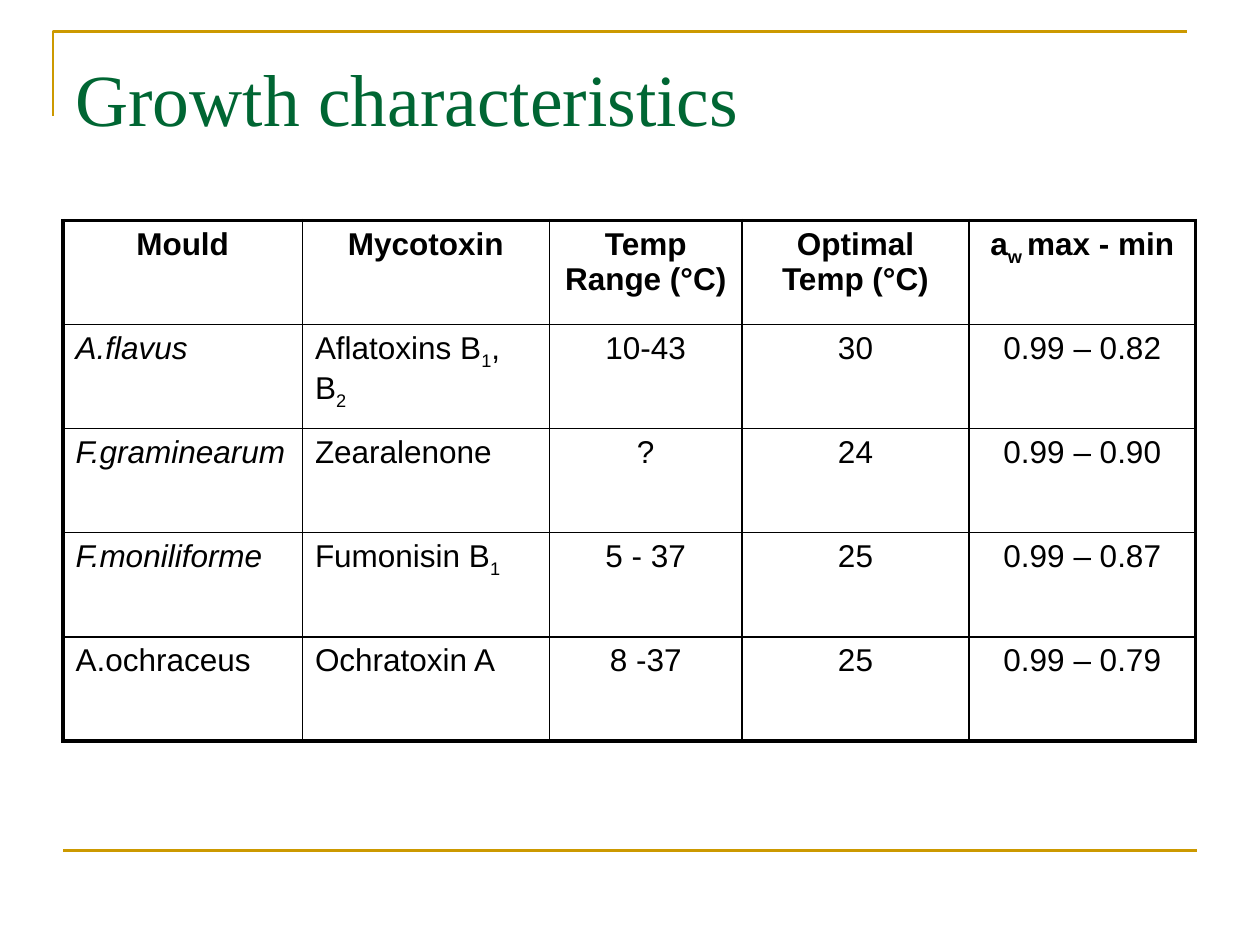
from lxml.etree import SubElement
from pptx import Presentation
from pptx.dml.color import RGBColor
from pptx.enum.shapes import MSO_CONNECTOR
from pptx.enum.text import MSO_ANCHOR, PP_ALIGN
from pptx.oxml.ns import qn
from pptx.util import Inches, Pt

GOLD = RGBColor(0xCC, 0x99, 0x00)
GREEN = RGBColor(0x00, 0x66, 0x33)
BLACK = RGBColor(0x00, 0x00, 0x00)

COL_WIDTHS = [1.9, 1.96, 1.53, 1.8, 1.8]
ROW_HEIGHT = 0.826
THIN, THICK = 1, 2.25

# Text between tildes is subscript.
ROWS = [
    ["Mould", "Mycotoxin", "Temp Range (°C)", "Optimal Temp (°C)", "a~w ~max - min"],
    ["A.flavus", "Aflatoxins B~1~, B~2~", "10-43", "30", "0.99 – 0.82"],
    ["F.graminearum", "Zearalenone", "?", "24", "0.99 – 0.90"],
    ["F.moniliforme", "Fumonisin B~1~", "5 - 37", "25", "0.99 – 0.87"],
    ["A.ochraceus", "Ochratoxin A", "8 -37", "25", "0.99 – 0.79"],
]
ITALIC_MOULDS = {"A.flavus", "F.graminearum", "F.moniliforme"}


class SlideBuilder:
    def __init__(self, slide):
        self.slide = slide
        self.title_font = "Times New Roman"
        self.body_font = "Arial"

    def run(self, p, text, font, size, color, bold=False, italic=False):
        r = p.add_run()
        r.text = text
        r.font.name, r.font.size = font, Pt(size)
        r.font.bold, r.font.italic = bold, italic
        r.font.color.rgb = color
        return r

    def title(self, text, left, top, width, height):
        box = self.slide.shapes.add_textbox(
            Inches(left), Inches(top), Inches(width), Inches(height))
        tf = box.text_frame
        tf.word_wrap = True
        tf.margin_top = Inches(0.12)
        tf.vertical_anchor = MSO_ANCHOR.TOP
        self.run(tf.paragraphs[0], text, self.title_font, 42, GREEN)

    def corner(self, points):
        """Draw an open gold outline through the points."""
        (x, y), *rest = [(Inches(px), Inches(py)) for px, py in points]
        builder = self.slide.shapes.build_freeform(x, y)
        builder.add_line_segments(rest, close=False)
        sp = builder.convert_to_shape()
        sp.shadow.inherit = False
        sp.fill.background()
        sp.line.color.rgb = GOLD
        sp.line.width = Pt(1.5)

    def rule(self, x1, x2, y):
        line = self.slide.shapes.add_connector(
            MSO_CONNECTOR.STRAIGHT, Inches(x1), Inches(y), Inches(x2), Inches(y))
        line.line.color.rgb = GOLD
        line.line.width = Pt(1.5)
        SubElement(line._element.spPr, qn("a:effectLst"))

    def border(self, cell, side, width):
        ln = SubElement(cell._tc.get_or_add_tcPr(), qn(f"a:ln{side}"), w=str(Pt(width)))
        fill = SubElement(ln, qn("a:solidFill"))
        SubElement(fill, qn("a:srgbClr"), val=str(BLACK))

    def cell(self, cell, text, centred, bold, italic):
        p = cell.text_frame.paragraphs[0]
        p.alignment = PP_ALIGN.CENTER if centred else PP_ALIGN.LEFT
        for i, part in enumerate(text.split("~")):
            if part:
                r = self.run(p, part, self.body_font, 18, BLACK, bold, italic)
                if i % 2:
                    r._r.get_or_add_rPr().set("baseline", "-25000")

    def table(self, rows, left, top):
        last_row, last_col = len(rows) - 1, len(COL_WIDTHS) - 1
        table = self.slide.shapes.add_table(
            len(rows), len(COL_WIDTHS), Inches(left), Inches(top),
            Inches(sum(COL_WIDTHS)), Inches(ROW_HEIGHT * len(rows))).table
        table.first_row = table.horz_banding = False
        for column, width in zip(table.columns, COL_WIDTHS):
            column.width = Inches(width)
        for i, texts in enumerate(rows):
            table.rows[i].height = Inches(ROW_HEIGHT)
            for j, text in enumerate(texts):
                cell = table.cell(i, j)
                self.cell(cell, text, centred=i == 0 or j > 1, bold=i == 0,
                          italic=text in ITALIC_MOULDS)
                outer = {"L": j == 0, "R": j == last_col, "T": i == 0, "B": i == last_row}
                for side, is_outer in outer.items():
                    self.border(cell, side, THICK if is_outer else THIN)
                cell.fill.background()


def main():
    prs = Presentation()
    prs.slide_width, prs.slide_height = Inches(10), Inches(7.5)
    s = SlideBuilder(prs.slides.add_slide(prs.slide_layouts[6]))
    s.corner([(0.42, 0.92), (0.42, 0.25), (9.42, 0.25)])
    s.rule(0.5, 9.5, 6.75)
    s.title("Growth characteristics", 0.5, 0.3, 9, 1.25)
    s.table(ROWS, 0.5, 1.75)
    prs.save("out.pptx")


if __name__ == "__main__":
    main()
